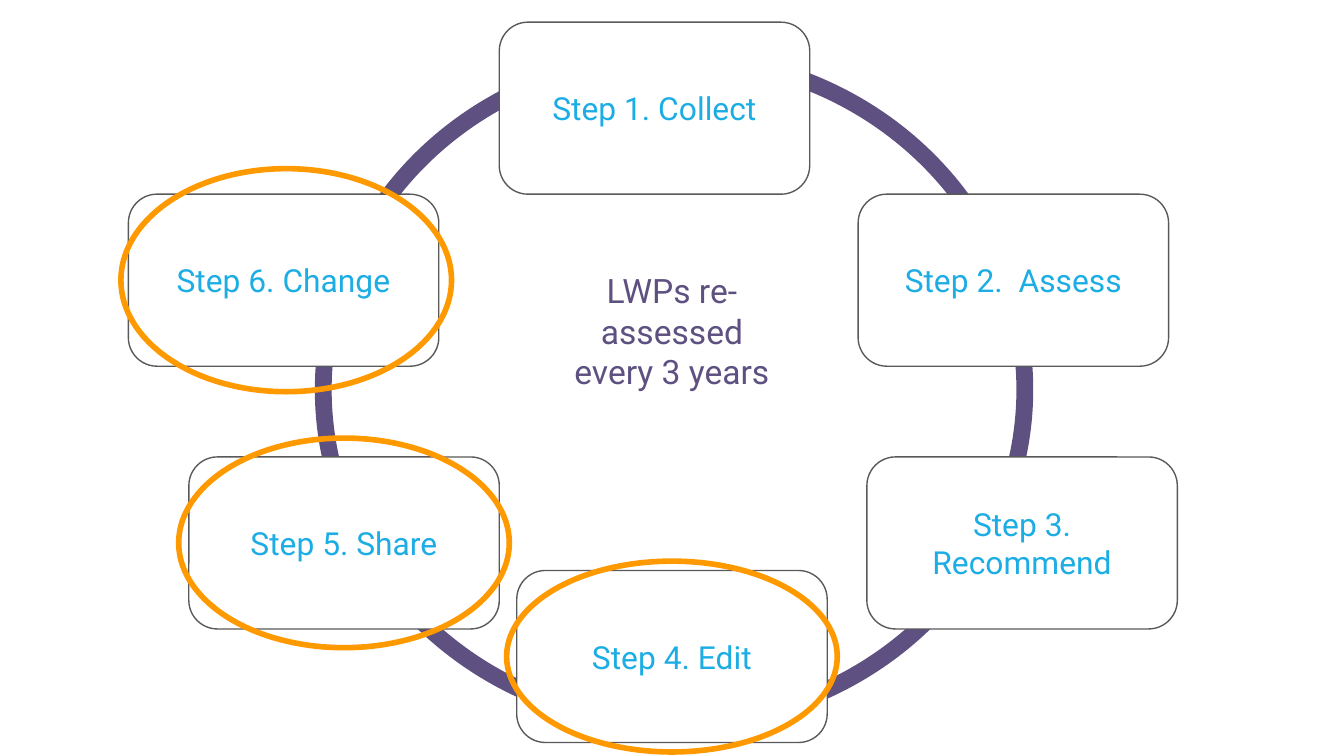
"""Build a slide showing a six-step review cycle around a ring."""
from typing import NamedTuple

from pptx import Presentation
from pptx.dml.color import RGBColor
from pptx.enum.shapes import MSO_SHAPE
from pptx.enum.text import MSO_ANCHOR, MSO_AUTO_SIZE, PP_ALIGN
from pptx.util import Pt

OVAL = MSO_SHAPE.OVAL
ROUNDED = MSO_SHAPE.ROUNDED_RECTANGLE
CENTER = PP_ALIGN.CENTER
MIDDLE, TOP = MSO_ANCHOR.MIDDLE, MSO_ANCHOR.TOP
GROW = MSO_AUTO_SIZE.SHAPE_TO_FIT_TEXT

EMU_PER_PX = 4572
SLIDE_W, SLIDE_H = 2000, 1125
FONT = "Roboto"
COLORS = {
    "ring": "5E5181",
    "step": "1CADE4",
    "border": "595959",
    "highlight": "FF9900",
    "white": "FFFFFF",
}
STEP_W, STEP_H = 462, 256
INSET = 20


class Box(NamedTuple):
    x: int
    y: int
    w: int
    h: int


class Step(NamedTuple):
    text: str
    x: int
    y: int


RING = Box(481, 84, 1044, 992)
CAPTION = Box(810, 382, 380, 282)
STEPS = [
    Step("Step 1. Collect", 743, 33),
    Step("Step 2.  Assess", 1277, 289),
    Step("Step 3. Recommend", 1290, 680),
    Step("Step 4. Edit", 769, 849),
    Step("Step 5. Share", 281, 680),
    Step("Step 6. Change", 191, 289),
]
HIGHLIGHTS = [
    Box(180, 251, 492, 332),
    Box(754, 835, 492, 284),
    Box(266, 652, 492, 312),
]


def px(n: int) -> int:
    return n * EMU_PER_PX


def rgb(name: str) -> RGBColor:
    return RGBColor.from_string(COLORS[name])


def add_outline(slide, kind, box: Box, color: str, width: float):
    sp = slide.shapes.add_shape(kind, *map(px, box))
    sp.shadow.inherit = False
    sp.fill.background()
    sp.line.color.rgb = rgb(color)
    sp.line.width = Pt(width)
    return sp


def set_text(sp, text: str, color: str, size: int, anchor) -> None:
    tf = sp.text_frame
    tf.word_wrap = True
    tf.vertical_anchor = anchor
    tf.margin_left = tf.margin_right = px(INSET)
    tf.margin_top = tf.margin_bottom = px(INSET)
    p = tf.paragraphs[0]
    p.alignment = CENTER
    r = p.add_run()
    r.text = text
    r.font.name = FONT
    r.font.size = Pt(size)
    r.font.color.rgb = rgb(color)


def add_step(slide, step: Step) -> None:
    box = Box(step.x, step.y, STEP_W, STEP_H)
    sp = add_outline(slide, ROUNDED, box, "border", 0.75)
    sp.fill.solid()
    sp.fill.fore_color.rgb = rgb("white")
    set_text(sp, step.text, "step", 17, MIDDLE)


def add_caption(slide, box: Box, text: str) -> None:
    sp = slide.shapes.add_textbox(*map(px, box))
    set_text(sp, text, "ring", 18, TOP)
    sp.text_frame.auto_size = GROW


def main() -> None:
    prs = Presentation()
    prs.slide_width, prs.slide_height = px(SLIDE_W), px(SLIDE_H)
    slide = prs.slides.add_slide(prs.slide_layouts[6])
    add_outline(slide, OVAL, RING, "ring", 9)
    for step in STEPS:
        add_step(slide, step)
    for box in HIGHLIGHTS:
        add_outline(slide, OVAL, box, "highlight", 3)
    add_caption(slide, CAPTION, "LWPs re-assessed every 3 years")
    prs.save("out.pptx")


if __name__ == "__main__":
    main()
